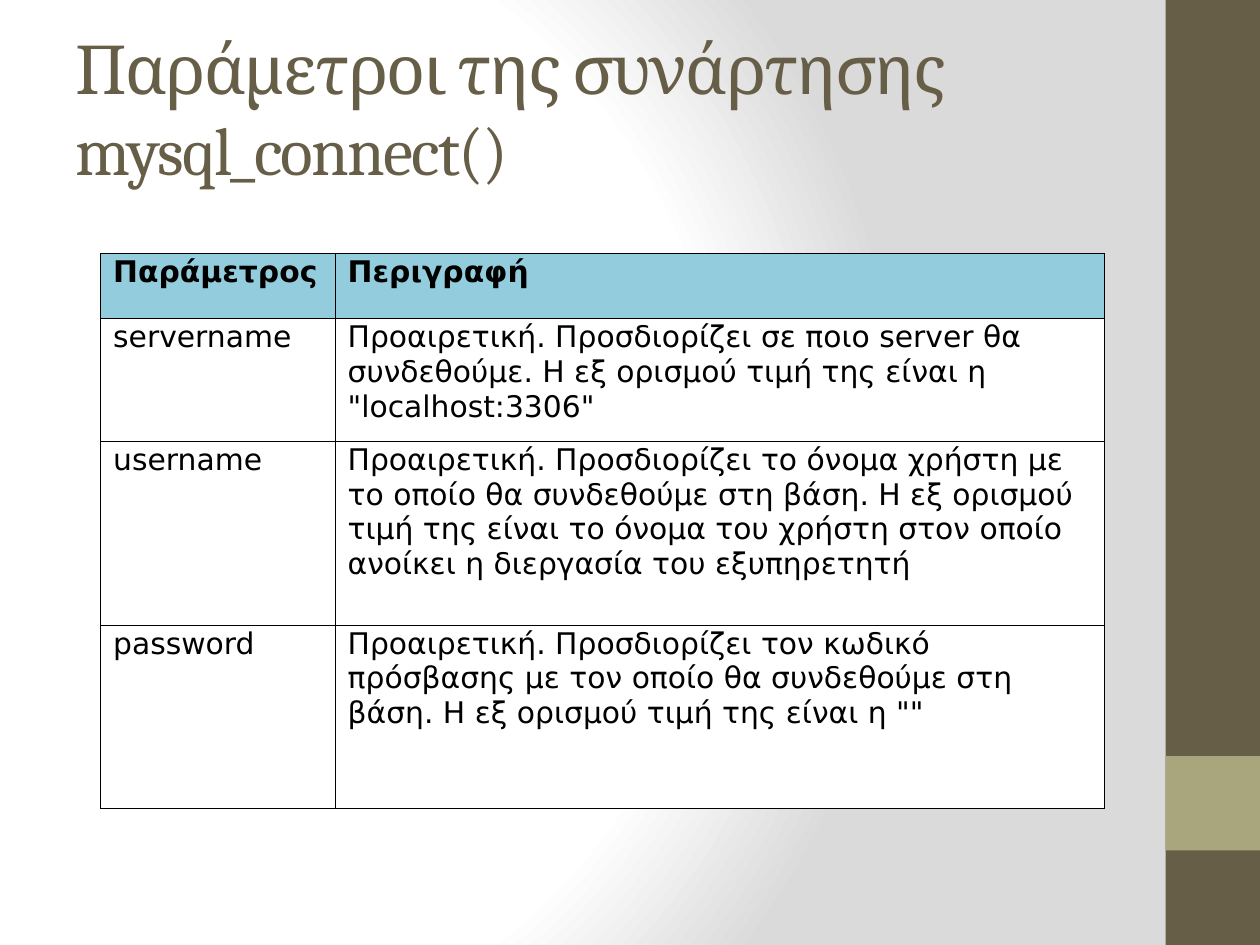
from pptx import Presentation
from pptx.dml.color import RGBColor
from pptx.enum.shapes import MSO_SHAPE
from pptx.enum.text import MSO_ANCHOR
from pptx.oxml import parse_xml
from pptx.oxml.ns import nsdecls
from pptx.util import Pt

RECT = MSO_SHAPE.RECTANGLE
BOTTOM = MSO_ANCHOR.BOTTOM
BROWN = RGBColor(0x67, 0x5E, 0x47)
OLIVE = RGBColor(0xA9, 0xA5, 0x7C)
BLUE = RGBColor(0x93, 0xCD, 0xDD)
WHITE = RGBColor(0xFF, 0xFF, 0xFF)
BLACK = RGBColor(0x00, 0x00, 0x00)
GREY = RGBColor(0xDA, 0xDA, 0xDA)

ROWS = [
    ("Παράμετρος", "Περιγραφή"),
    ("servername", "Προαιρετική. Προσδιορίζει σε ποιο server θα συνδεθούμε. "
                   "Η εξ ορισμού τιμή της είναι η \"localhost:3306\""),
    ("username", "Προαιρετική. Προσδιορίζει το όνομα χρήστη με το οποίο θα "
                 "συνδεθούμε στη βάση. Η εξ ορισμού τιμή της είναι το όνομα του "
                 "χρήστη στον οποίο ανοίκει η διεργασία του εξυπηρετητή"),
    ("password", "Προαιρετική. Προσδιορίζει τον κωδικό πρόσβασης με τον οποίο θα "
                 "συνδεθούμε στη βάση. Η εξ ορισμού τιμή της είναι η \"\""),
]
COL_WIDTHS = [134, 439.5]
ROW_HEIGHTS = [37.5, 70, 105, 105]


def set_font(r, name, size, color, bold=False):
    r.font.name = name
    r.font.size = Pt(size)
    r.font.color.rgb = color
    r.font.bold = bold


def add_borders(cell):
    """Draw a thin black line on all four sides, ahead of the cell's fill."""
    tc_pr = cell._tc.get_or_add_tcPr()
    for i, side in enumerate(("lnL", "lnR", "lnT", "lnB")):
        tc_pr.insert(i, parse_xml(
            f'<a:{side} {nsdecls("a")} w="{Pt(0.5)}"><a:solidFill>'
            f'<a:srgbClr val="{BLACK}"/></a:solidFill></a:{side}>'))


prs = Presentation()
prs.slide_width, prs.slide_height = Pt(720), Pt(540)
s = prs.slides.add_slide(prs.slide_layouts[6])

# Radial background
s.background.fill.solid()
solid = s._element.xpath("p:cSld/p:bg/p:bgPr/a:solidFill")[0]
stops = "".join(
    f'<a:gs pos="{pos * 1000}"><a:srgbClr val="{color}"/></a:gs>'
    for pos, color in ((0, WHITE), (75, WHITE), (100, GREY)))
solid.getparent().replace(solid, parse_xml(
    f'<a:gradFill {nsdecls("a")} rotWithShape="1"><a:gsLst>{stops}</a:gsLst>'
    '<a:path path="circle"><a:fillToRect l="20000" t="50000" r="100000" b="50000"/>'
    '</a:path></a:gradFill>'))

# Side band
for top, height, color in ((0, 540, BROWN), (432, 54, OLIVE)):
    band = s.shapes.add_shape(RECT, Pt(666), Pt(top), Pt(54), Pt(height))
    band.shadow.inherit = False
    band.fill.solid()
    band.fill.fore_color.rgb = color
    band.line.fill.background()

# Title
title = s.shapes.add_textbox(Pt(36), Pt(21.6), Pt(600), Pt(90))
tf = title.text_frame
tf.word_wrap = True
tf.vertical_anchor = BOTTOM
tf.text = "Παράμετροι της συνάρτησης mysql_connect()"
r = tf.paragraphs[0].runs[0]
set_font(r, "Cambria", 38.7, BROWN)
r.font._element.set("spc", "-100")

# Parameter table
table = s.shapes.add_table(len(ROWS), len(COL_WIDTHS), Pt(57.5), Pt(144.75),
                           Pt(sum(COL_WIDTHS)), Pt(sum(ROW_HEIGHTS))).table
for column, width in zip(table.columns, COL_WIDTHS):
    column.width = Pt(width)
for i, (row, height) in enumerate(zip(table.rows, ROW_HEIGHTS)):
    row.height = Pt(height)
    for cell, text in zip(row.cells, ROWS[i]):
        cell.margin_left = Pt(7.2)
        cell.margin_right = cell.margin_top = Pt(0.75)
        cell.margin_bottom = 0
        cell.fill.solid()
        cell.fill.fore_color.rgb = BLUE if i == 0 else WHITE
        cell.text_frame.text = text
        set_font(cell.text_frame.paragraphs[0].runs[0], "DejaVu Sans", 17, BLACK,
                 bold=i == 0)
        add_borders(cell)

prs.save("out.pptx")
